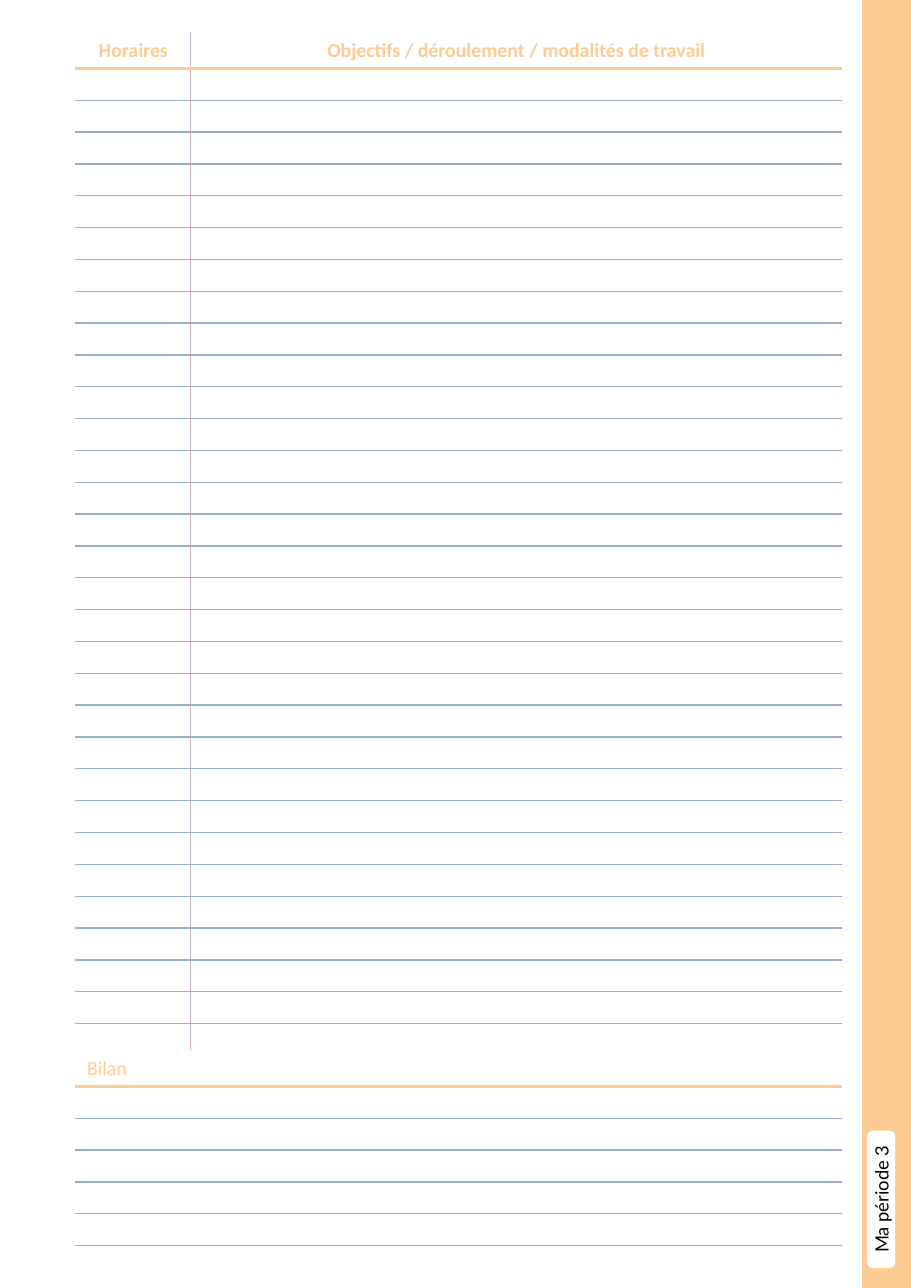
from lxml import etree
from pptx import Presentation
from pptx.dml.color import RGBColor
from pptx.enum import shapes, text
from pptx.oxml import ns
from pptx.util import Inches, Pt

ORANGE = RGBColor(0xFF, 0xCB, 0x94)
BLUE = RGBColor(0x9A, 0xAD, 0xCD)
PINK = RGBColor(0xDC, 0xA9, 0xCC)
WHITE = RGBColor(0xFF, 0xFF, 0xFF)
BLACK = RGBColor(0, 0, 0)

HEADER_H = 0.32
LINES_TO_NINE_INCHES = 31
LINE_H = 8.96 / LINES_TO_NINE_INCHES


def add_ruled_table(slide, top, widths, lines, headings, divider, bold, align):
    """Add a heading row with a thick orange rule, then blank writing lines."""
    height = HEADER_H + lines * LINE_H
    frame = slide.shapes.add_table(lines + 1, len(widths), Inches(0.69), Inches(top),
                                   Inches(sum(widths)), Inches(height))
    table = frame.table
    table.first_row = table.horz_banding = False
    for column, width in zip(table.columns, widths):
        column.width = Inches(width)

    for i, row in enumerate(table.rows):
        row.height = Inches(LINE_H if i else HEADER_H)
        for j, cell in enumerate(row.cells):
            above = (WHITE, ORANGE, BLUE)[min(i, 2)]
            borders = {"L": divider if j else WHITE,
                       "R": WHITE if j else divider,
                       "T": above,
                       "B": BLUE if i else ORANGE}
            tcPr = cell._tc.get_or_add_tcPr()
            for side, color in borders.items():
                width = Pt(2.25 if color == ORANGE else 1)
                ln = etree.SubElement(tcPr, ns.qn(f"a:ln{side}"), w=str(width))
                fill = etree.SubElement(ln, ns.qn("a:solidFill"))
                etree.SubElement(fill, ns.qn("a:srgbClr"), val=str(color))
            cell.fill.solid()
            cell.fill.fore_color.rgb = WHITE

            p = cell.text_frame.paragraphs[0]
            if i == 0 and headings[j]:
                p.alignment = align
                r = p.add_run()
                r.text = headings[j]
                r.font.size = Pt(13)
                r.font.name = "Calibri"
                r.font.bold = bold
                r.font.color.rgb = ORANGE
            else:
                # Small empty text keeps the row at its set height
                etree.SubElement(p._p, ns.qn("a:endParaRPr"), sz="1000")
    return table


def add_block(slide, kind, left, top, width, height, color):
    sp = slide.shapes.add_shape(kind, Inches(left), Inches(top), Inches(width), Inches(height))
    sp.shadow.inherit = False
    sp.fill.solid()
    sp.fill.fore_color.rgb = color
    sp.line.color.rgb = color
    sp.line.width = Pt(1)
    return sp


prs = Presentation()
prs.slide_width = Inches(8.27)
prs.slide_height = Inches(11.69)
s = prs.slides.add_slide(prs.slide_layouts[6])

# Timetable and review tables
add_ruled_table(s, 0.3, [1.04, 5.91], 31,
                ["Horaires", "Objectifs / déroulement / modalités de travail"],
                PINK, True, text.PP_ALIGN.CENTER)
review = add_ruled_table(s, 9.54, [3.47, 3.48], 5, ["Bilan", ""],
                         WHITE, False, text.PP_ALIGN.LEFT)
for i in range(1, 6):
    review.cell(i, 0).merge(review.cell(i, 1))

# Side band and period tab
add_block(s, shapes.MSO_SHAPE.RECTANGLE, 7.83, 0, 0.43, 11.69, ORANGE)
tab = add_block(s, shapes.MSO_SHAPE.ROUNDED_RECTANGLE, 7.88, 10.27, 0.24, 1.23, WHITE)
tf = tab.text_frame
tf.vertical_anchor = text.MSO_ANCHOR.MIDDLE
tf._txBody.bodyPr.set("vert", "vert270")
p = tf.paragraphs[0]
p.alignment = text.PP_ALIGN.CENTER
r = p.add_run()
r.text = "Ma période 3"
r.font.size = Pt(12)
r.font.name = "Lato"
r.font.color.rgb = BLACK

prs.save("out.pptx")
